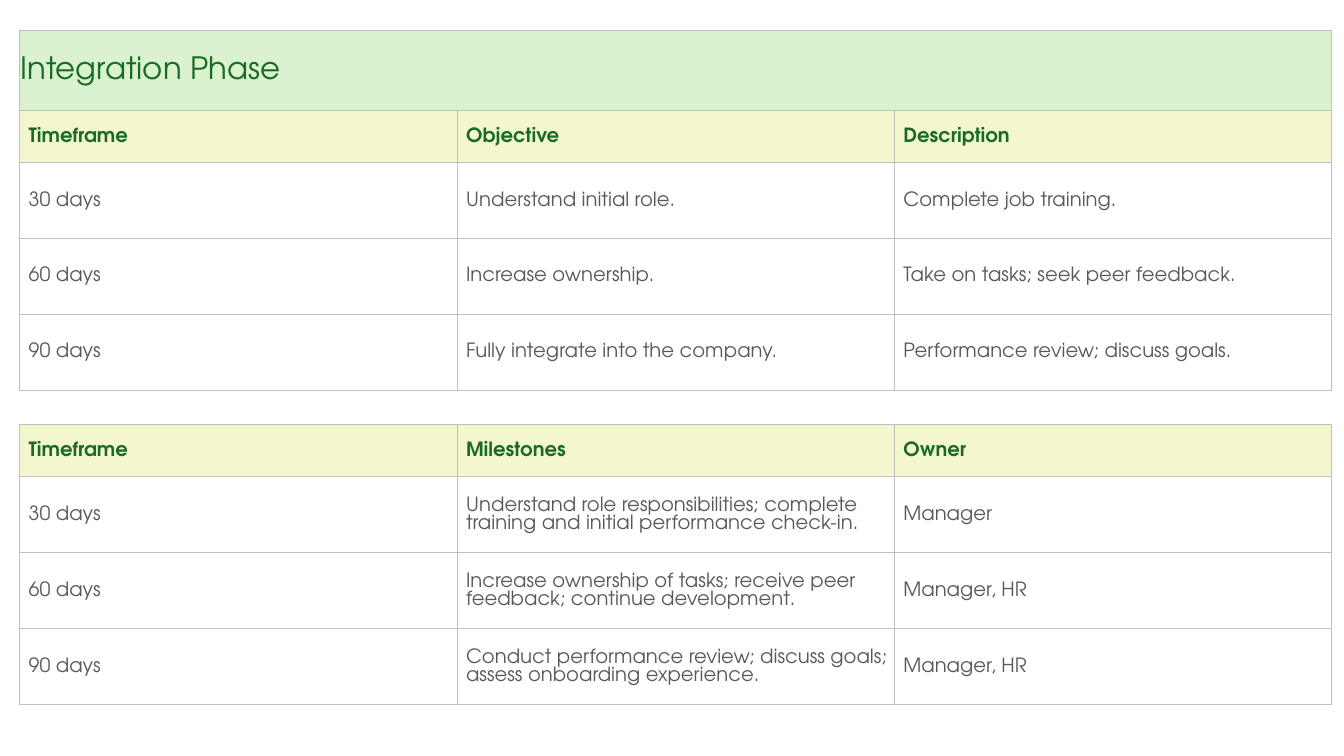
from pptx import Presentation
from pptx.dml.color import RGBColor as RGB
from pptx.enum.text import MSO_ANCHOR as Anchor
from pptx.oxml import parse_xml
from pptx.oxml.ns import nsdecls
from pptx.util import Pt

GREEN = RGB(0x19, 0x6B, 0x24)
GRAY = RGB(0x59, 0x59, 0x59)
MINT = RGB(0xDA, 0xF2, 0xD0)
CREAM = RGB(0xF4, 0xF7, 0xCD)
EDGE = RGB(0xBF, 0xBF, 0xBF)
FONT = "TeX Gyre Adventor"

ROWS = [
    ("title", 57.2, ["Integration Phase", "", ""]),
    ("head", 37.1, ["Timeframe", "Objective", "Description"]),
    ("body", 54.2, ["30 days", "Understand initial role.", "Complete job training."]),
    ("body", 54.2, ["60 days", "Increase ownership.", "Take on tasks; seek peer feedback."]),
    ("body", 54.2, ["90 days", "Fully integrate into the company.",
                    "Performance review; discuss goals."]),
    ("gap", 25, ["", "", ""]),
    ("head", 37.1, ["Timeframe", "Milestones", "Owner"]),
    ("body", 54.2, ["30 days", "Understand role responsibilities; complete training "
                    "and initial performance check-in.", "Manager"]),
    ("body", 54.2, ["60 days", "Increase ownership of tasks; receive peer feedback; "
                    "continue development.", "Manager, HR"]),
    ("body", 54.2, ["90 days", "Conduct performance review; discuss goals; "
                    "assess onboarding experience.", "Manager, HR"]),
]
FORMATS = {
    "title": {"size": Pt(22), "bold": False, "name": FONT},
    "head": {"size": Pt(14), "bold": True, "name": FONT},
    "body": {"size": Pt(14), "bold": False, "name": FONT},
}
INKS = {"title": GREEN, "head": GREEN, "body": GRAY}
FILLS = {"title": MINT, "head": CREAM}


def add_edges(cell, kind):
    props = cell._tc.get_or_add_tcPr()
    for spot, side in enumerate("LRTB"):
        if kind == "gap" and side in "LR":
            paint = "<a:noFill/>"
        else:
            paint = f'<a:solidFill><a:srgbClr val="{EDGE}"/></a:solidFill>'
        props.insert(spot, parse_xml(
            f'<a:ln{side} {nsdecls("a")} w="{Pt(0.5)}">{paint}</a:ln{side}>'))


deck = Presentation()
deck.slide_width, deck.slide_height = Pt(960), Pt(540)
slide = deck.slides.add_slide(deck.slide_layouts[6])

high = sum(tall for kind, tall, words in ROWS)
frame = slide.shapes.add_table(len(ROWS), 3, Pt(14), Pt(21.6), Pt(937.2), Pt(high))
table = frame.table
table.first_row = table.horz_banding = False
for col in table.columns:
    col.width = Pt(312.4)

for r, (kind, tall, words) in enumerate(ROWS):
    table.rows[r].height = Pt(tall)
    for c, text in enumerate(words):
        cell = table.cell(r, c)
        left = 6.5 if kind in ("head", "body") else 0.7
        shape = {"margin_left": Pt(left), "margin_right": Pt(0.7), "margin_top": Pt(0.7),
                 "margin_bottom": Pt(0), "vertical_anchor": Anchor.MIDDLE}
        for key, value in shape.items():
            setattr(cell, key, value)
        if kind in FILLS:
            cell.fill.solid()
            cell.fill.fore_color.rgb = FILLS[kind]
        else:
            cell.fill.background()
        add_edges(cell, kind)
        if text:
            run = cell.text_frame.paragraphs[0].add_run()
            run.text = text
            for key, value in FORMATS[kind].items():
                setattr(run.font, key, value)
            run.font.color.rgb = INKS[kind]

table.cell(0, 0).merge(table.cell(0, 2))
deck.save("out.pptx")
